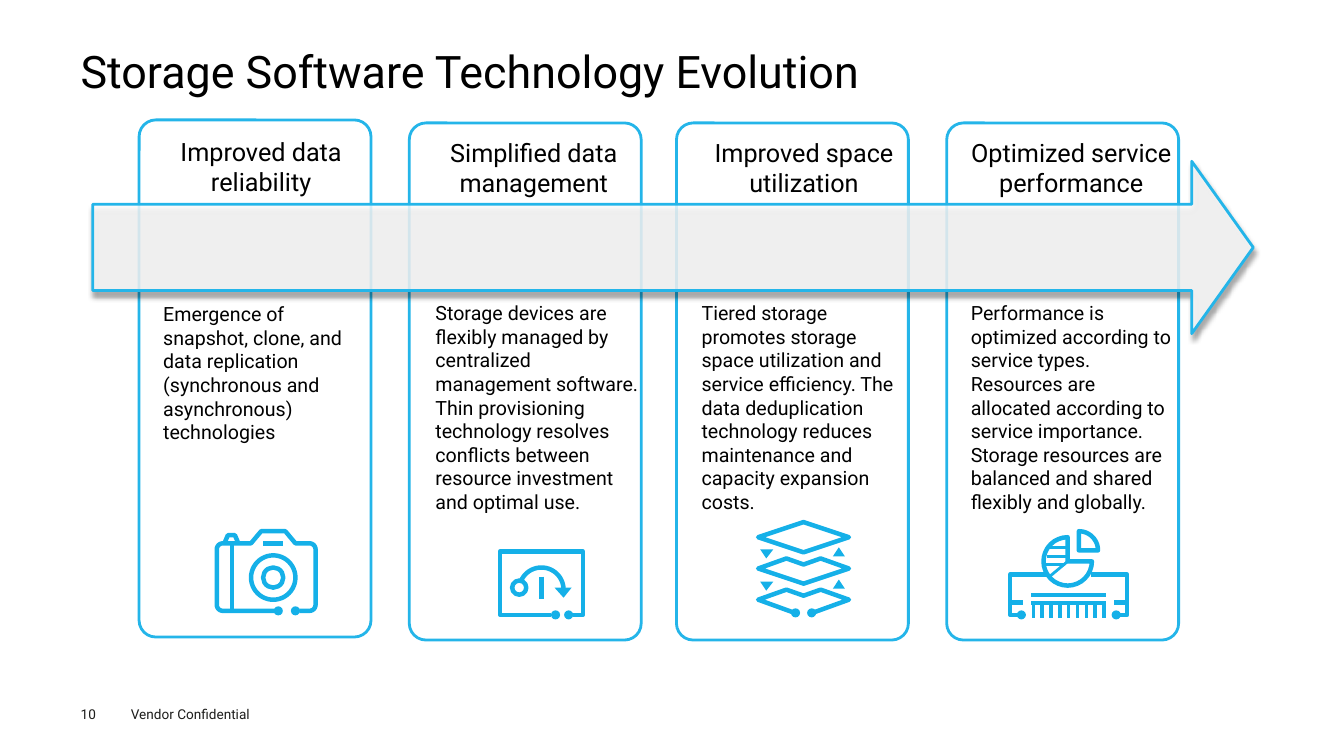
from math import cos, radians, sin

from lxml import etree
from pptx import Presentation
from pptx.dml.color import RGBColor
from pptx.enum.shapes import MSO_CONNECTOR, MSO_SHAPE
from pptx.enum.text import MSO_ANCHOR, PP_ALIGN
from pptx.oxml import parse_xml
from pptx.oxml.ns import nsdecls, qn
from pptx.util import Inches, Pt

ROUND = MSO_SHAPE.ROUNDED_RECTANGLE
ARROW = MSO_SHAPE.RIGHT_ARROW
OVAL = MSO_SHAPE.OVAL
STRAIGHT = MSO_CONNECTOR.STRAIGHT
LEFT, CENTER = PP_ALIGN.LEFT, PP_ALIGN.CENTER
TOP = MSO_ANCHOR.TOP
COLORS = {"ink": "000000", "foot": "1D1D1B", "edge": "24B5E9",
          "icon": "15B0E8", "white": "FFFFFF"}
FONT = "Roboto"
BOLD, THIN = 3.2, 2

CARDS = [
    (1.38, 1.19, "Improved data reliability", (1.48, 1.3, 2.22), (1.52, 2.95),
     "Emergence of snapshot, clone, and data replication (synchronous and "
     "asynchronous) technologies"),
    (4.06, 1.22, "Simplified data management", (4.33, 1.31, 1.93), (4.22, 2.94),
     "Storage devices are flexibly managed by centralized management software. "
     "Thin provisioning technology resolves conflicts between resource "
     "investment and optimal use."),
    (6.71, 1.22, "Improved space utilization", (6.86, 1.31, 2.23), (6.86, 2.94),
     "Tiered storage promotes storage space utilization and service efficiency. "
     "The data deduplication technology reduces maintenance and capacity "
     "expansion costs."),
    (9.39, 1.22, "Optimized service performance", (9.51, 1.31, 2.23), (9.53, 2.94),
     "Performance is optimized according to service types. Resources are "
     "allocated according to service importance. Storage resources are "
     "balanced and shared flexibly and globally."),
]


def arc(x, y, r, start, end, steps=24):
    turns = [radians(start + (end - start) * i / steps) for i in range(steps + 1)]
    return [(x + r * cos(a), y - r * sin(a)) for a in turns]


class Deck:
    """Draws styled elements on the current slide."""

    def __init__(self):
        self.show = Presentation()
        self.show.slide_width = Inches(13.33)
        self.show.slide_height = Inches(7.5)
        self.slide = self.show.slides.add_slide(self.show.slide_layouts[6])
        self.shapes = self.slide.shapes

    def paint(self, shape, fill=None, line=None, width=BOLD):
        shape.shadow.inherit = False
        if fill:
            shape.fill.solid()
            shape.fill.fore_color.rgb = RGBColor.from_string(COLORS[fill])
        else:
            shape.fill.background()
        if line:
            shape.line.color.rgb = RGBColor.from_string(COLORS[line])
            shape.line.width = Pt(width)
        else:
            shape.line.fill.background()

    def text(self, box, words, size, color="ink", align=LEFT, inset=True, space=1):
        frame = self.shapes.add_textbox(*map(Inches, box)).text_frame
        frame.word_wrap = True
        frame.vertical_anchor = TOP
        if not inset:
            frame.margin_left = frame.margin_right = 0
            frame.margin_top = frame.margin_bottom = 0
        frame.text = words
        para = frame.paragraphs[0]
        para.alignment = align
        para.line_spacing = space
        font = para.runs[0].font
        font.name, font.size = FONT, Pt(size)
        font.color.rgb = RGBColor.from_string(COLORS[color])

    def card(self, left, top):
        shape = self.shapes.add_shape(ROUND, *map(Inches, (left, top, 2.3, 5.13)))
        shape.adjustments[0] = 0.072
        self.paint(shape, line="edge", width=2)

    def arrow(self, box):
        shape = self.shapes.add_shape(ARROW, *map(Inches, box))
        shape.adjustments[0], shape.adjustments[1] = 0.5, 0.357
        self.paint(shape, "white", "edge", 2)
        props = shape._element.spPr
        tint = props.find(qn("a:solidFill"))[0]
        etree.SubElement(tint, qn("a:alpha")).set("val", "81000")
        glow = parse_xml(
            f'<a:outerShdw {nsdecls("a")} blurRad="{Pt(4)}" dist="{Pt(3)}" '
            'dir="5400000" rotWithShape="0"><a:srgbClr val="000000">'
            '<a:alpha val="40000"/></a:srgbClr></a:outerShdw>')
        props.find(qn("a:effectLst")).append(glow)

    def form(self, strands, close):
        spots = [[(Inches(x), Inches(y)) for x, y in strand] for strand in strands]
        pen = self.shapes.build_freeform(*spots[0][0])
        pen.add_line_segments(spots[0][1:], close=close)
        for first, *others in spots[1:]:
            pen.move_to(*first)
            pen.add_line_segments(others, close=close)
        return pen.convert_to_shape()

    def trace(self, *strands, close=False, width=BOLD):
        shape = self.form(strands, close)
        self.paint(shape, line="icon", width=width)
        etree.SubElement(shape._element.spPr.find(qn("a:ln")), qn("a:round"))

    def solid(self, points):
        self.paint(self.form([points], True), "icon")

    def line(self, x1, y1, x2, y2, width=BOLD):
        link = self.shapes.add_connector(STRAIGHT, *map(Inches, (x1, y1, x2, y2)))
        link.line.color.rgb = RGBColor.from_string(COLORS["icon"])
        link.line.width = Pt(width)
        etree.SubElement(link._element.spPr, qn("a:effectLst"))

    def disc(self, x, y, r):
        return self.shapes.add_shape(OVAL, *map(Inches, (x - r, y - r, 2 * r, 2 * r)))

    def dot(self, x, y):
        self.paint(self.disc(x, y, 0.045), "icon")

    def ring(self, x, y, r):
        self.paint(self.disc(x, y, r), line="icon")

    def photo(self):
        self.trace([(2.72, 6.06), *arc(2.21, 6, 0.06, 270, 180, 6),
                    *arc(2.21, 5.45, 0.06, 180, 90, 6), (2.49, 5.39),
                    (2.59, 5.27), (2.83, 5.27), (2.93, 5.39),
                    *arc(3.07, 5.45, 0.06, 90, 0, 6),
                    *arc(3.07, 6, 0.06, 0, -90, 6), (2.97, 6.06)],
                   [(2.23, 5.38), (2.26, 5.31), (2.33, 5.31), (2.36, 5.38)],
                   [(2.3, 5.39), (2.3, 6.06)])
        self.line(2.61, 5.39, 2.81, 5.39)
        for r in (0.1, 0.22):
            self.ring(2.71, 5.73, r)
        for x in (2.76, 2.93):
            self.dot(x, 6.06)

    def gauge(self):
        self.trace([(5.47, 6.1), (4.96, 6.1), (4.96, 5.47), (5.78, 5.47),
                    (5.78, 6.1), (5.68, 6.1)])
        self.line(5.37, 5.72, 5.37, 5.94)
        self.ring(5.15, 5.83, 0.07)
        self.trace(arc(5.37, 5.85, 0.22, 155, 0))
        self.solid([(5.5, 5.83), (5.67, 5.83), (5.59, 5.93)])
        for x in (5.51, 5.64):
            self.dot(x, 6.1)

    def layers(self):
        self.trace([(7.52, 5.33), (7.97, 5.18), (8.42, 5.33), (7.97, 5.48)], close=True)
        self.trace([(7.52, 5.64), (7.8, 5.54), (7.97, 5.6), (8.14, 5.54),
                    (8.42, 5.64), (7.97, 5.79)], close=True)
        self.trace([(7.88, 6.08), (7.52, 5.95), (7.8, 5.85), (7.97, 5.91),
                    (8.14, 5.85), (8.42, 5.95), (8.06, 6.08)])
        for y in (5.45, 5.77):
            self.solid([(7.54, y), (7.67, y), (7.6, y + 0.09)])
            self.solid([(8.26, y + 0.07), (8.38, y + 0.07), (8.32, y - 0.02)])
        for x in (7.89, 8.05):
            self.dot(x, 6.08)

    def memory(self):
        frame = []
        for edge, way in ((10.02, 1), (11.18, -1)):
            frame.append([(edge + way * dx, y) for dx, y in
                          ((0.08, 6.1), (0, 6.1), (0, 5.7), (0.36, 5.7))])
            frame.append([(edge, 5.98), (edge + way * 0.13, 5.98)])
            self.dot(edge + way * 0.11, 6.1)
        hub = (10.59, 5.57)
        self.trace(*frame, [hub, *arc(*hub, 0.24, 90, 360), hub])
        self.trace(*([(x, y), (end, y)] for x, y, end in
                     ((10.41, 5.43, 10.6), (10.38, 5.52, 10.6), (10.37, 5.6, 10.56))),
                   [hub, (10.41, 5.72)], width=THIN)
        self.trace([*arc(10.7, 5.46, 0.19, 0, 90), (10.7, 5.46)], close=True)
        self.line(10.23, 5.9, 10.97, 5.9, 2.6)
        teeth = [10.25 + 0.0875 * i for i in range(9)]
        self.trace([(10.23, 5.98), (10.97, 5.98)],
                   *([(x, 5.98), (x, 6.13)] for x in teeth), width=2.5)


def main():
    deck = Deck()
    deck.text((1.2, 6.95, 1.6, 0.27), "Vendor Confidential", 9.7, "foot")
    deck.text((0.8, 7, 0.55, 0.16), "10", 9.7, "foot", inset=False)
    deck.text((0.8, 0.49, 11.73, 0.54), "Storage Software Technology Evolution",
              32, inset=False, space=0.9)
    for left, top, *rest in CARDS:
        deck.card(left, top)
    deck.arrow((0.92, 1.6, 11.51, 1.71))
    for left, top, head, spot, place, body in CARDS:
        deck.text((*spot, 0.4), head, 18, align=CENTER)
        deck.text((*place, 2.22, 2.12), body, 14)
    for draw in (deck.photo, deck.gauge, deck.layers, deck.memory):
        draw()
    deck.show.save("out.pptx")


if __name__ == "__main__":
    main()
